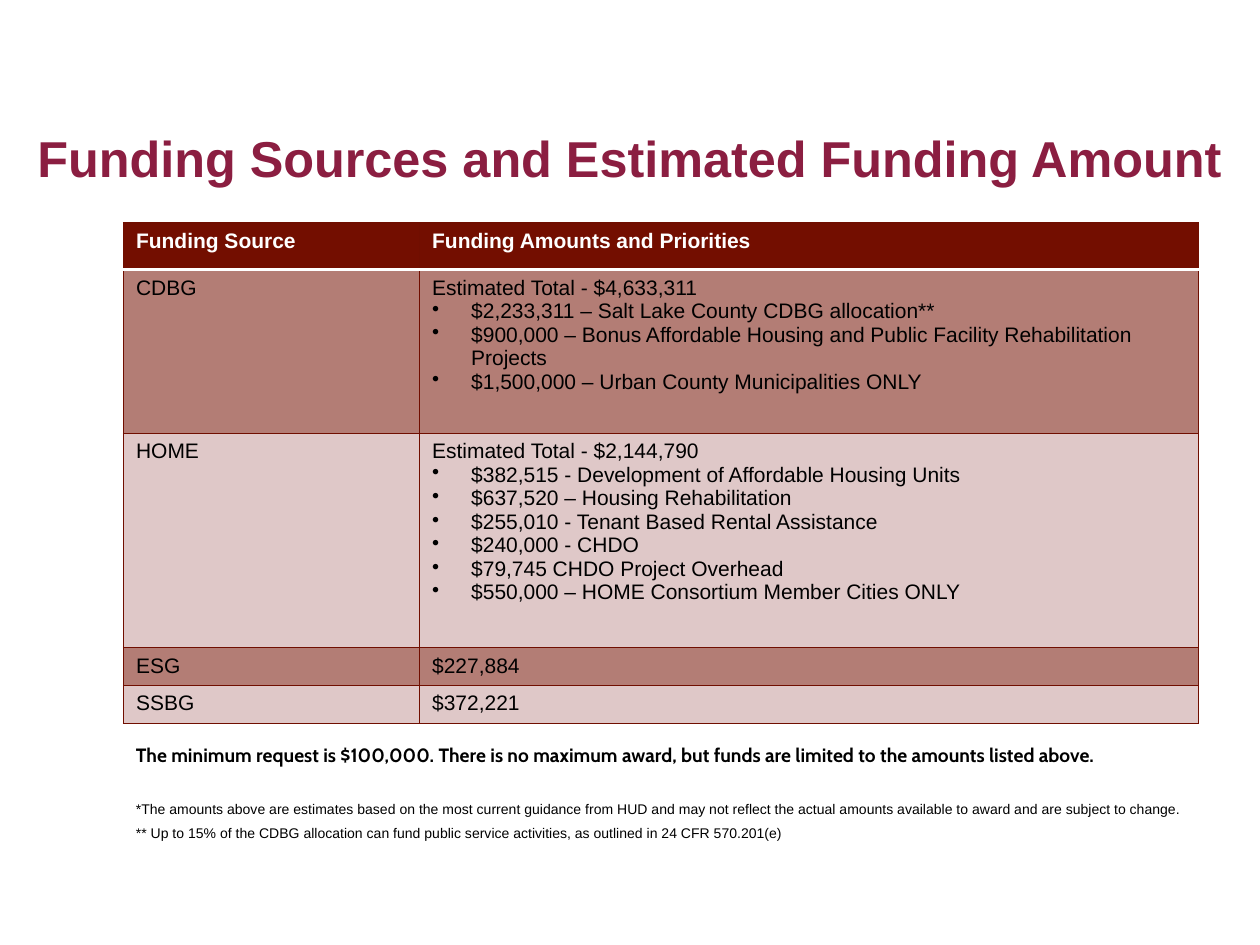
"""Build the slide on funding sources and estimated amounts."""
import pptx
import pptx.dml.color
import pptx.enum.text
import pptx.oxml
import pptx.oxml.ns
import pptx.util

Inches, Pt = pptx.util.Inches, pptx.util.Pt
SubElement = pptx.oxml.ns.qn and pptx.oxml.parse_xml
HUES = {"title": "8B1E41", "head": "730E00", "edge": "700E00", "dark": "B37D75",
        "light": "DFC8C8", "white": "FFFFFF", "black": "000000"}
SPACE = 'xmlns:a="http://schemas.openxmlformats.org/drawingml/2006/main"'


def write(para, text, size=12, face="Arial", hue="black", bold=False,
          bullet=False, line=None, before=0, align="LEFT"):
    """Fill a paragraph with one formatted run."""
    props = para._p.get_or_add_pPr()
    if bullet:
        props.set("marL", str(Inches(0.31)))
        props.set("indent", str(Inches(-0.31)))
        props.append(pptx.oxml.parse_xml(f'<a:buChar {SPACE} char="•"/>'))
    para.alignment = getattr(pptx.enum.text.PP_ALIGN, align)
    para.space_before = Pt(before)
    if line:
        para.line_spacing = Pt(line)
    run = para.add_run()
    run.text = text
    run.font.size, run.font.name, run.font.bold = Pt(size), face, bold
    run.font.color.rgb = pptx.dml.color.RGBColor.from_string(HUES[hue])


def border(cell, side, hue, width):
    """Draw one side of a cell."""
    cell._tc.get_or_add_tcPr().append(pptx.oxml.parse_xml(
        f'<a:ln{side} {SPACE} w="{Pt(width)}"><a:solidFill>'
        f'<a:srgbClr val="{HUES[hue]}"/></a:solidFill></a:ln{side}>'))


deck = pptx.Presentation()
deck.slide_width, deck.slide_height = Inches(10), Inches(7.5)
slide = deck.slides.add_slide(deck.slide_layouts[5])

title = slide.shapes.title
title.left, title.top = Inches(-0.17), Inches(0.68)
title.width, title.height = Inches(10.34), Inches(1.14)
title.text_frame.vertical_anchor = pptx.enum.text.MSO_ANCHOR.MIDDLE
write(title.text_frame.paragraphs[0], "Funding Sources and Estimated Funding Amount",
      size=28.8, hue="title", bold=True, align="CENTER")

rows = [
    ("Funding Source", ["Funding Amounts and Priorities"], 0.37),
    ("CDBG", ["Estimated Total - $4,633,311",
              "$2,233,311 – Salt Lake County CDBG allocation**",
              "$900,000 – Bonus Affordable Housing and Public Facility Rehabilitation Projects",
              "$1,500,000 – Urban County Municipalities ONLY"], 1.3),
    ("HOME", ["Estimated Total - $2,144,790",
              "$382,515 - Development of Affordable Housing Units",
              "$637,520 – Housing Rehabilitation",
              "$255,010 - Tenant Based Rental Assistance",
              "$240,000 - CHDO",
              "$79,745 CHDO Project Overhead",
              "$550,000 – HOME Consortium Member Cities ONLY"], 1.7),
    ("ESG", ["$227,884"], 0.3),
    ("SSBG", ["$372,221"], 0.3),
]
table = slide.shapes.add_table(len(rows), 2, Inches(0.98), Inches(1.77),
                               Inches(8.53), Inches(3.97)).table
for column, width in zip(table.columns, (2.35, 6.18)):
    column.width = Inches(width)
for r, (source, amounts, height) in enumerate(rows):
    table.rows[r].height = Inches(height)
    for c, lines in enumerate(([source], amounts)):
        cell = table.cell(r, c)
        for side in "LRTB":
            if (r, side) in ((0, "B"), (1, "T")):
                border(cell, side, "white", 2)
            else:
                border(cell, side, "edge", 0.75)
        cell.fill.solid()
        fill = "head" if r == 0 else "dark" if r % 2 else "light"
        cell.fill.fore_color.rgb = pptx.dml.color.RGBColor.from_string(HUES[fill])
        frame = cell.text_frame
        for n, text in enumerate(lines):
            para = frame.add_paragraph() if n else frame.paragraphs[0]
            write(para, text, hue="black" if r else "white", bold=r == 0, bullet=n > 0)

notes = slide.shapes.add_textbox(Inches(0.98), Inches(5.83), Inches(8.66), Inches(0.89))
frame = notes.text_frame
frame.word_wrap = True
write(frame.paragraphs[0], "The minimum request is $100,000. There is no maximum award, "
      "but funds are limited to the amounts listed above.",
      size=11, face="Cabin", bold=True, line=14.8)
write(frame.add_paragraph(), "*The amounts above are estimates based on the most current "
      "guidance from HUD and may not reflect the actual amounts available to award "
      "and are subject to change.", size=8, line=13.9, before=14.8)
write(frame.add_paragraph(), "** Up to 15% of the CDBG allocation can fund public service "
      "activities, as outlined in 24 CFR 570.201(e)", size=8, line=13.9)

deck.save("out.pptx")
